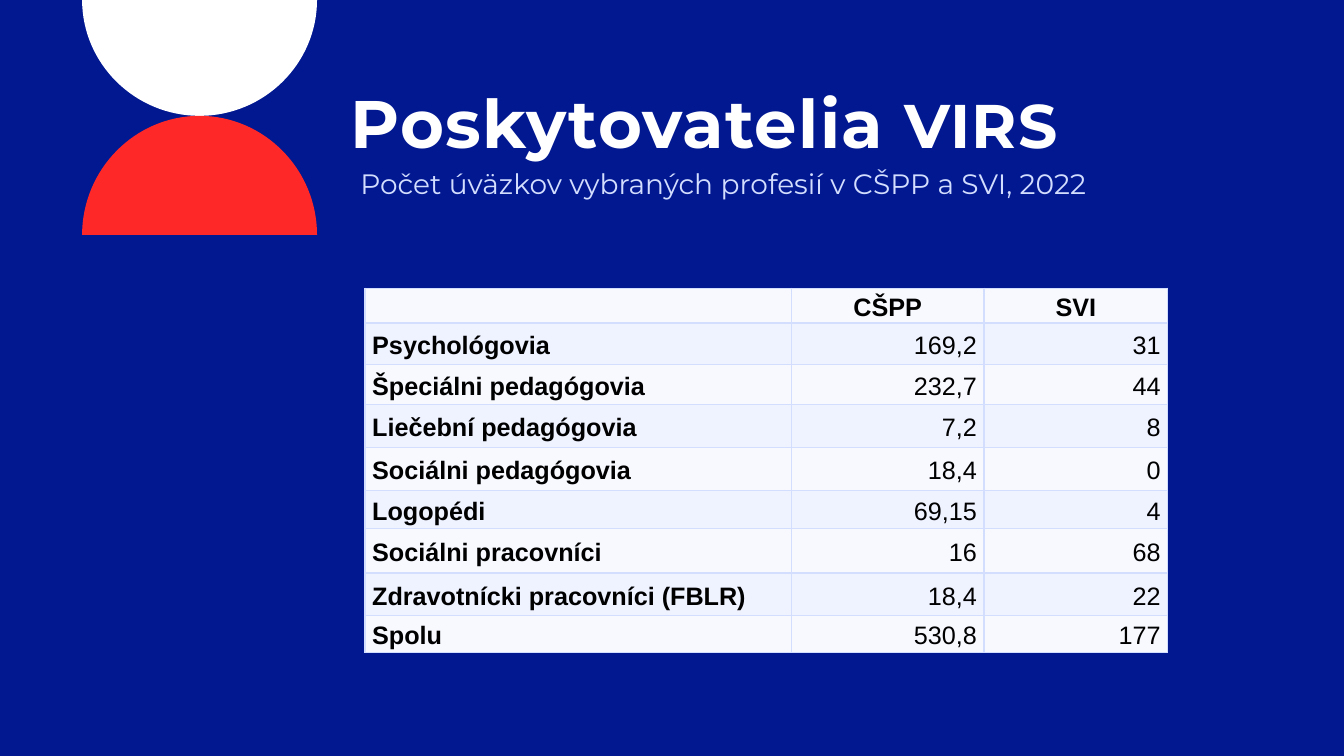
from lxml.etree import SubElement as Sub
from pptx import Presentation
from pptx.dml.color import RGBColor as Rgb
from pptx.enum.text import MSO_ANCHOR as Anchor, PP_ALIGN as Align
from pptx.oxml.ns import qn
from pptx.util import Cm, Pt

hues = {"navy": "011891", "white": "FFFFFF", "red": "FF2828", "pale": "D3DDFE",
        "light": "F7F9FF", "tint": "EFF2FF", "black": "000000"}


def paint(fill, hue):
    fill.solid()
    fill.fore_color.rgb = Rgb.from_string(hues[hue])


def write(para, text, hue, **font):
    run = para.add_run()
    run.text = text
    run.font.color.rgb = Rgb.from_string(hues[hue])
    for key, val in font.items():
        setattr(run.font, key, val)
    return run


deck = Presentation()
deck.slide_width, deck.slide_height = Cm(33.87), Cm(19.05)
slide = deck.slides.add_slide(deck.slide_layouts[6])
paint(slide.background.fill, "navy")

bend = 0.55
curve = [(-1, 0), (-1, bend), (-bend, 1), (0, 1), (bend, 1), (1, bend), (1, 0)]
for hue, base, tall in (("white", 0, 2.92), ("red", 5.92, -3)):
    spots = [(Cm(5.03 + 2.96 * x), Cm(base + tall * y)) for x, y in curve]
    form = slide.shapes.build_freeform(*spots[0])
    form.add_line_segments(spots[1:], close=True)
    half = form.convert_to_shape()
    half.shadow.inherit = False
    half.line.fill.background()
    paint(half.fill, hue)
    lines = list(half._element.iter(qn("a:lnTo")))
    for n in (0, 3):
        lines[n].tag = qn("a:cubicBezTo")
        for line in lines[n + 1:n + 3]:
            lines[n].append(line[0])
            line.getparent().remove(line)

title = slide.shapes.add_textbox(Cm(8.83), Cm(2.29), Cm(20.83), Cm(1.75)).text_frame
for key in ("left", "top", "right", "bottom"):
    setattr(title, "margin_" + key, 0)
title.word_wrap = True
head = title.paragraphs[0]
head.line_spacing = 0.9
for text, size in (("Poskytovatelia", 48), (" VIRS", 44)):
    run = write(head, text, "white", name="Montserrat", size=Pt(size), bold=True)
    run.font._element.set("spc", "100")

note = slide.shapes.add_textbox(Cm(8.83), Cm(4.06), Cm(19.86), Cm(1.96)).text_frame
note.word_wrap = True
write(note.paragraphs[0], "Počet úväzkov vybraných profesií v CŠPP a SVI, 2022", "pale",
      name="Montserrat", size=Pt(20))

rows = [("", "CŠPP", "SVI"),
        ("Psychológovia", "169,2", "31"),
        ("Špeciálni pedagógovia", "232,7", "44"),
        ("Liečební pedagógovia", "7,2", "8"),
        ("Sociálni pedagógovia", "18,4", "0"),
        ("Logopédi", "69,15", "4"),
        ("Sociálni pracovníci", "16", "68"),
        ("Zdravotnícki pracovníci (FBLR)", "18,4", "22"),
        ("Spolu", "530,8", "177")]
highs = [0.88, 1.04, 1.02, 1.07, 1.09, 0.96, 1.12, 1.07, 0.93]
wides = [10.74, 4.86, 4.63]
grid = slide.shapes.add_table(len(rows), len(wides), Cm(9.2), Cm(7.26),
                              Cm(sum(wides)), Cm(sum(highs))).table
for col, wide in zip(grid.columns, wides):
    col.width = Cm(wide)

look = {"vertical_anchor": Anchor.MIDDLE, "margin_left": Cm(0.18), "margin_right": Cm(0.18),
        "margin_top": 0, "margin_bottom": 0}
for r, row in enumerate(rows):
    grid.rows[r].height = Cm(highs[r])
    for c, text in enumerate(row):
        cell = grid.cell(r, c)
        for key, val in look.items():
            setattr(cell, key, val)
        props = cell._tc.get_or_add_tcPr()
        for side in ("a:lnL", "a:lnR", "a:lnT", "a:lnB"):
            edge = Sub(props, qn(side), w=str(Pt(1)))
            Sub(Sub(edge, qn("a:solidFill")), qn("a:srgbClr"), val=hues["pale"])
        paint(cell.fill, "tint" if r % 2 else "light")
        if text:
            para = cell.text_frame.paragraphs[0]
            para.alignment = Align.LEFT if c == 0 else Align.RIGHT if r else Align.CENTER
            para.line_spacing = 1.15
            para.space_after = Pt(10)
            write(para, text, "black", name="Arial", size=Pt(18), bold=r == 0 or c == 0)

deck.save("out.pptx")
